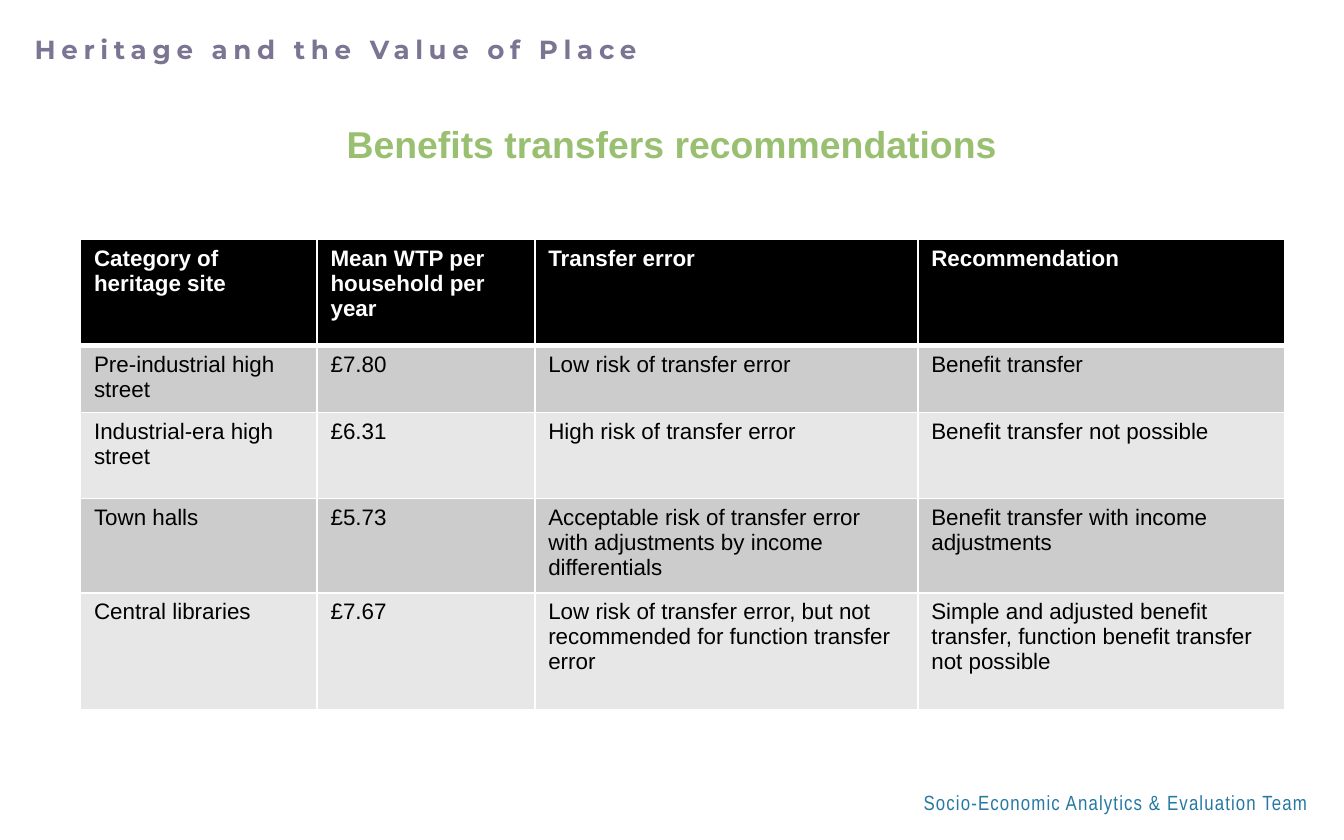
import pptx
import pptx.util
import pptx.dml.color
import pptx.enum.text
import lxml.etree
from pptx.oxml.ns import qn

Inches, Pt = pptx.util.Inches, pptx.util.Pt
ALIGN = pptx.enum.text.PP_ALIGN

# Content
COLORS = {
    "white": "FFFFFF", "black": "000000", "dark": "CCCCCC", "light": "E7E7E7",
    "green": "99BF71", "purple": "7B7492", "blue": "2579A4",
}
# text, box, alignment, font, size, colour, bold, letter spacing in points
TEXTS = [
    ("Socio-Economic Analytics & Evaluation Team", (5.89, 5.83, 3.94, 0.29),
     ALIGN.RIGHT, "Arial Narrow", 11, "blue", False, 0.6),
    ("Heritage and the Value of Place", (0.16, 0.2, 9.5, 0.34),
     ALIGN.LEFT, "Montserrat", 14, "purple", True, 3),
    ("Benefits transfers recommendations", (0.08, 0.85, 9.84, 0.44),
     ALIGN.CENTER, "Arial", 20, "green", True, 0),
]
ROWS = [
    ("Category of heritage site", "Mean WTP per household per year",
     "Transfer error", "Recommendation"),
    ("Pre-industrial high street", "£7.80",
     "Low risk of transfer error", "Benefit transfer"),
    ("Industrial-era high street", "£6.31",
     "High risk of transfer error", "Benefit transfer not possible"),
    ("Town halls", "£5.73",
     "Acceptable risk of transfer error with adjustments by income differentials",
     "Benefit transfer with income adjustments"),
    ("Central libraries", "£7.67",
     "Low risk of transfer error, but not recommended for function transfer error",
     "Simple and adjusted benefit transfer, function benefit transfer not possible"),
]
WIDTHS = [1.76, 1.62, 2.85, 2.73]
HEIGHTS = [0.79, 0.49, 0.64, 0.70, 0.87]
LEFT, TOP = 0.6, 1.78


def rgb(name):
    return pptx.dml.color.RGBColor.from_string(COLORS[name])


def add_run(para, text, face, size, color, bold):
    run = para.add_run()
    run.text = text
    run.font.name = face
    run.font.size = Pt(size)
    run.font.bold = bold
    run.font.color.rgb = rgb(color)
    return run


def add_edges(cell, above, below):
    """Border widths in points; the sides are always 1."""
    props = cell._tc.get_or_add_tcPr()
    edges = [("L", 1), ("R", 1), ("T", above), ("B", below)]
    for i, (side, width) in enumerate(edges):
        line = lxml.etree.Element(qn("a:ln" + side), w=str(Pt(width)))
        fill = lxml.etree.SubElement(line, qn("a:solidFill"))
        lxml.etree.SubElement(fill, qn("a:srgbClr"), val=COLORS["white"])
        props.insert(i, line)


deck = pptx.Presentation()
deck.slide_width, deck.slide_height = Inches(10), Inches(6.25)
slide = deck.slides.add_slide(deck.slide_layouts[6])

# Footer, running head and title
for text, box, align, face, size, color, bold, gap in TEXTS:
    frame = slide.shapes.add_textbox(*map(Inches, box)).text_frame
    frame.word_wrap = True
    para = frame.paragraphs[0]
    para.alignment = align
    run = add_run(para, text, face, size, color, bold)
    if gap:
        run.font._element.set("spc", str(int(gap * 100)))

# Table of recommendations
table = slide.shapes.add_table(
    len(ROWS), len(WIDTHS), Inches(LEFT), Inches(TOP),
    Inches(sum(WIDTHS)), Inches(sum(HEIGHTS))).table
for col, width in zip(table.columns, WIDTHS):
    col.width = Inches(width)
for r, (row, height) in enumerate(zip(ROWS, HEIGHTS)):
    table.rows[r].height = Inches(height)
    head = r == 0
    shade = "black" if head else "dark" if r % 2 else "light"
    for c, text in enumerate(row):
        cell = table.cell(r, c)
        cell.fill.solid()
        cell.fill.fore_color.rgb = rgb(shade)
        add_edges(cell, 3 if r == 1 else 1, 3 if head else 1)
        add_run(cell.text_frame.paragraphs[0], text, "Arial", 12,
                "white" if head else "black", head)

deck.save("out.pptx")
